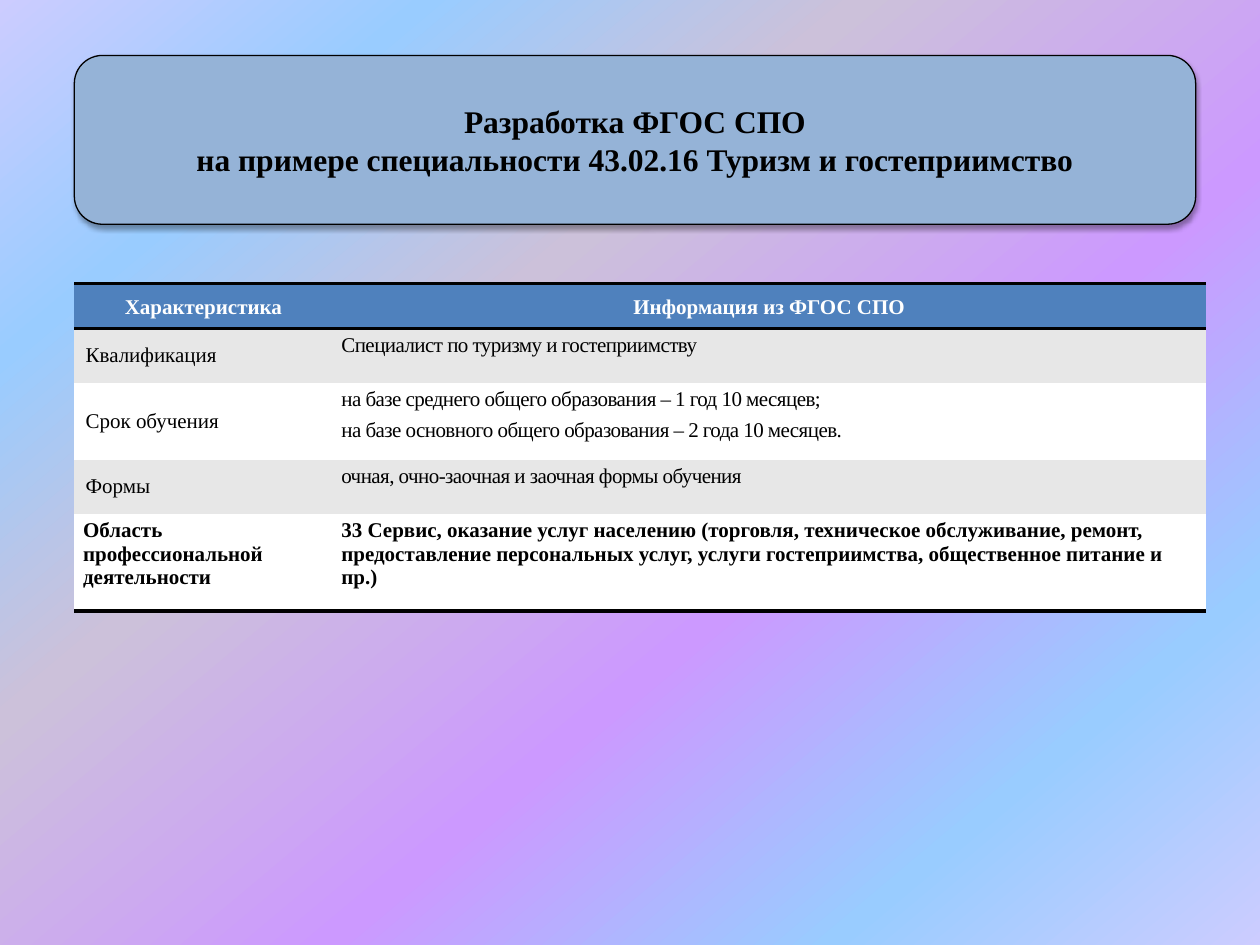
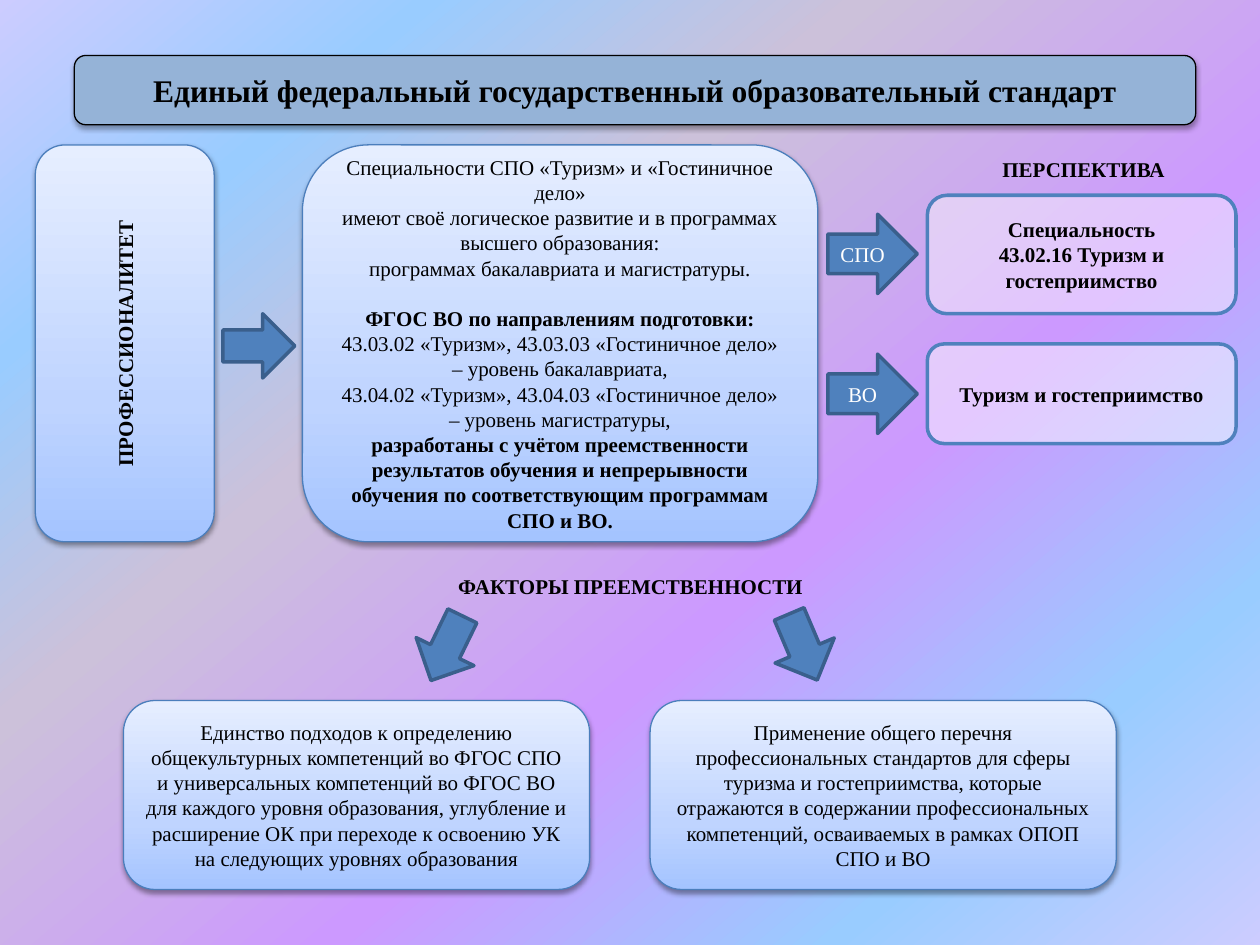
import lxml.etree
import pptx
import pptx.dml.color
import pptx.enum.shapes
import pptx.enum.text
import pptx.oxml.ns
import pptx.util

Inches = pptx.util.Inches
Pt = pptx.util.Pt
qn = pptx.oxml.ns.qn
SHAPE = pptx.enum.shapes.MSO_SHAPE
ALIGN = pptx.enum.text.PP_ALIGN
ANCHOR = pptx.enum.text.MSO_ANCHOR

FONT = "Times New Roman"
BLACK, WHITE, GREY = "000000", "FFFFFF", "E7E7E7"
BLUE, ARROW_LINE = "4F81BD", "3A5F8C"
TITLE_FILL, CARD_LINE = "95B3D7", "4B7EBC"
BACKGROUND = [(0, "CCCCFF"), (18, "99CCFF"), (36, "CCC1DA"),
              (61, "CC99FF"), (82, "99CCFF"), (100, "CCCCFF")]
CARD_STOPS = [(0, "A4C4FF"), (35, "BFD4FF"), (100, "E6EEFF")]
PLAIN_TABLE = "{2D5ABB26-0587-4C30-8999-92F81FD0307C}"


def rgb(color):
    return pptx.dml.color.RGBColor.from_string(color)


def add_xml(parent, tag, **attributes):
    return lxml.etree.SubElement(parent, qn(tag), {k: str(v) for k, v in attributes.items()})


def add_color(parent, color, alpha=None):
    node = add_xml(parent, "a:srgbClr", val=rgb(color))
    if alpha is not None:
        add_xml(node, "a:alpha", val=alpha * 1000)


class Deck:
    def __init__(self):
        self.prs = pptx.Presentation()
        self.prs.slide_width = Inches(10)
        self.prs.slide_height = Inches(7.5)
        self.s = None

    def slide(self):
        self.s = self.prs.slides.add_slide(self.prs.slide_layouts[6])
        self.gradient(self.s.background.fill, self.s.element, BACKGROUND, 310)

    def gradient(self, fill, element, stops, angle):
        fill.gradient()
        fill.gradient_angle = angle
        stop_list = element.find(".//" + qn("a:gsLst"))
        for old in list(stop_list):
            stop_list.remove(old)
        for position, color in stops:
            add_color(add_xml(stop_list, "a:gs", pos=position * 1000), color)

    def text(self, tf, lines, size=12, color=BLACK, bold=False, align=ALIGN.CENTER,
             line=None, before=None, after=None, spacing=None):
        tf.word_wrap = True
        for i, words in enumerate(lines):
            p = tf.paragraphs[0] if i == 0 else tf.add_paragraph()
            p.alignment = align
            if line:
                p.line_spacing = line
            if before is not None:
                p.space_before = Pt(before)
            if after is not None:
                p.space_after = Pt(after)
            r = p.add_run()
            r.text = words
            r.font.name = FONT
            r.font.size = Pt(size)
            r.font.bold = bold
            r.font.color.rgb = rgb(color)
            if spacing:
                r._r.get_or_add_rPr().set("spc", str(round(spacing * 100)))

    def shape(self, kind, at, line, width):
        sp = self.s.shapes.add_shape(kind, *map(Inches, at))
        sp.shadow.inherit = False
        sp.line.color.rgb = rgb(line)
        sp.line.width = Pt(width)
        sp.text_frame.vertical_anchor = ANCHOR.MIDDLE
        return sp

    def solid(self, target, color):
        target.fill.solid()
        target.fill.fore_color.rgb = rgb(color)

    def drop_shadow(self, sp, alpha, distance):
        effects = sp._element.spPr.find(qn("a:effectLst"))
        shadow = add_xml(effects, "a:outerShdw", blurRad=Pt(3.1), dist=Pt(distance),
                         dir=90 * 60000, rotWithShape=0)
        add_color(shadow, BLACK, alpha)

    def turn_text(self, sp, direction):
        sp.text_frame._txBody.bodyPr.set("vert", direction)

    def title(self, lines, height):
        sp = self.shape(SHAPE.ROUNDED_RECTANGLE, (0.59, 0.44, 8.9, height), BLACK, 0.75)
        self.solid(sp, TITLE_FILL)
        self.drop_shadow(sp, 35, 1.8)
        self.text(sp.text_frame, lines, size=18, bold=True)

    def card(self, at, lines, bold=False):
        sp = self.shape(SHAPE.ROUNDED_RECTANGLE, at, CARD_LINE, 0.75)
        self.gradient(sp.fill, sp._element, CARD_STOPS, 90)
        self.drop_shadow(sp, 38, 1.6)
        self.text(sp.text_frame, lines, bold=bold)
        return sp

    def outlook(self, top, height, alpha, lines):
        sp = self.shape(SHAPE.ROUNDED_RECTANGLE, (7.36, top, 2.45, height), BLUE, 2)
        self.solid(sp, WHITE)
        color = sp._element.spPr.find(qn("a:solidFill") + "/" + qn("a:srgbClr"))
        add_xml(color, "a:alpha", val=alpha * 1000)
        self.text(sp.text_frame, lines, bold=True)

    def arrow(self, left, top, rotation, size=(0.51, 0.57), label=None):
        sp = self.shape(SHAPE.DOWN_ARROW, (left, top, *size), ARROW_LINE, 2)
        self.solid(sp, BLUE)
        sp.rotation = rotation
        if label:
            self.turn_text(sp, "vert")
            self.text(sp.text_frame, [label], color=WHITE)

    def heading(self, at, words):
        tf = self.s.shapes.add_textbox(*map(Inches, at)).text_frame
        self.text(tf, [words], bold=True, line=1.2)

    def table(self, at, widths, heights):
        frame = self.s.shapes.add_table(len(heights), len(widths), *map(Inches, at))
        table = frame.table
        table.first_row = table.horz_banding = False
        table._tbl.tblPr.find(qn("a:tableStyleId")).text = PLAIN_TABLE
        for column, width in zip(table.columns, widths):
            column.width = Inches(width)
        for row, height in zip(table.rows, heights):
            row.height = Inches(height)
        return table

    def cell(self, cell, lines, fill, borders=(), middle=False, left=0.07, **style):
        cell.margin_left, cell.margin_right = Inches(left), Inches(0.07)
        cell.margin_top = cell.margin_bottom = Inches(0.04)
        cell.vertical_anchor = ANCHOR.MIDDLE if middle else ANCHOR.TOP
        for side in borders:
            ln = add_xml(cell._tc.get_or_add_tcPr(), side, w=Pt(2))
            add_color(add_xml(ln, "a:solidFill"), BLACK)
        self.solid(cell, fill)
        self.text(cell.text_frame, lines, **style)


def build_characteristics(deck):
    deck.slide()
    table = deck.table((0.59, 2.25, 8.98, 2.6), (2.05, 6.93), (0.36, 0.43, 0.61, 0.43, 0.77))
    for column, words in enumerate(("Характеристика", "Информация из ФГОС СПО")):
        deck.cell(table.cell(0, column), [words], BLUE, ("a:lnT", "a:lnB"), middle=True,
                  color=WHITE, bold=True, line=1.07, after=8)
    facts = [
        ("Квалификация", ["Специалист по туризму и гостеприимству"]),
        ("Срок обучения", ["на базе среднего общего образования – 1 год 10 месяцев;",
                           "на базе основного общего образования – 2 года 10 месяцев."]),
        ("Формы", ["очная, очно-заочная и заочная формы обучения"]),
    ]
    for row, (name, lines) in enumerate(facts, 1):
        fill = GREY if row % 2 else WHITE
        deck.cell(table.cell(row, 0), [name], fill, middle=True, left=0.09, align=ALIGN.LEFT)
        deck.cell(table.cell(row, 1), lines, fill, align=ALIGN.JUSTIFY,
                  before=2, after=2, spacing=-0.3)
    area = ("Область профессиональной деятельности",
            "33 Сервис, оказание услуг населению (торговля, техническое обслуживание, ремонт, "
            "предоставление персональных услуг, услуги гостеприимства, общественное питание и пр.)")
    for column, words in enumerate(area):
        deck.cell(table.cell(4, column), [words], WHITE, ("a:lnB",), bold=True, align=ALIGN.LEFT)
    deck.title(["Разработка ФГОС СПО",
                "на примере специальности 43.02.16 Туризм и гостеприимство"], 1.34)


def build_standard(deck):
    deck.slide()
    deck.title(["Единый федеральный государственный образовательный стандарт"], 0.55)

    professionalitet = deck.card((0.28, 1.15, 1.42, 3.15), ["ПРОФЕССИОНАЛИТЕТ"], bold=True)
    deck.turn_text(professionalitet, "vert270")
    deck.arrow(1.8, 2.46, 270)

    programmes = deck.card((2.4, 1.15, 4.09, 3.15), [
        "Специальности СПО «Туризм» и «Гостиничное дело»",
        "имеют своё логическое развитие и в программах высшего образования:",
        "программах бакалавриата и магистратуры.",
        "ФГОС ВО по направлениям подготовки:",
        "43.03.02 «Туризм», 43.03.03 «Гостиничное дело» – уровень бакалавриата,",
        "43.04.02 «Туризм», 43.04.03 «Гостиничное дело» – уровень магистратуры,",
        "разработаны с учётом преемственности результатов обучения и непрерывности "
        "обучения по соответствующим программам СПО и ВО.",
    ])
    paragraphs = programmes.text_frame.paragraphs
    paragraphs[3].space_before = Pt(14.4)
    for p in (paragraphs[3], paragraphs[6]):
        p.runs[0].font.bold = True

    deck.heading((7.44, 1.15, 2.32, 0.39), "ПЕРСПЕКТИВА")
    deck.outlook(1.55, 0.94, 43, ["Специальность", "43.02.16 Туризм и гостеприимство"])
    deck.outlook(2.73, 0.79, 48, ["Туризм и гостеприимство"])
    for top, label in ((1.66, "СПО"), (2.77, "ВО")):
        deck.arrow(6.61, top, 270, (0.63, 0.71), label)

    deck.heading((2.72, 4.46, 4.57, 0.31), "ФАКТОРЫ ПРЕЕМСТВЕННОСТИ")
    deck.arrow(3.29, 4.86, 25.9)
    deck.arrow(6.12, 4.85, 337)
    factors = [
        "Единство подходов к определению общекультурных компетенций во ФГОС СПО "
        "и универсальных компетенций во ФГОС ВО для каждого уровня образования, "
        "углубление и расширение ОК при переходе к освоению УК "
        "на следующих уровнях образования",
        "Применение общего перечня профессиональных стандартов для сферы туризма "
        "и гостеприимства, которые отражаются в содержании профессиональных компетенций, "
        "осваиваемых в рамках ОПОП СПО и ВО",
    ]
    for i, words in enumerate(factors):
        deck.card((0.98 + 4.18 * i, 5.56, 3.7, 1.5), [words])


def main():
    deck = Deck()
    build_characteristics(deck)
    build_standard(deck)
    deck.prs.save("out.pptx")


if __name__ == "__main__":
    main()
